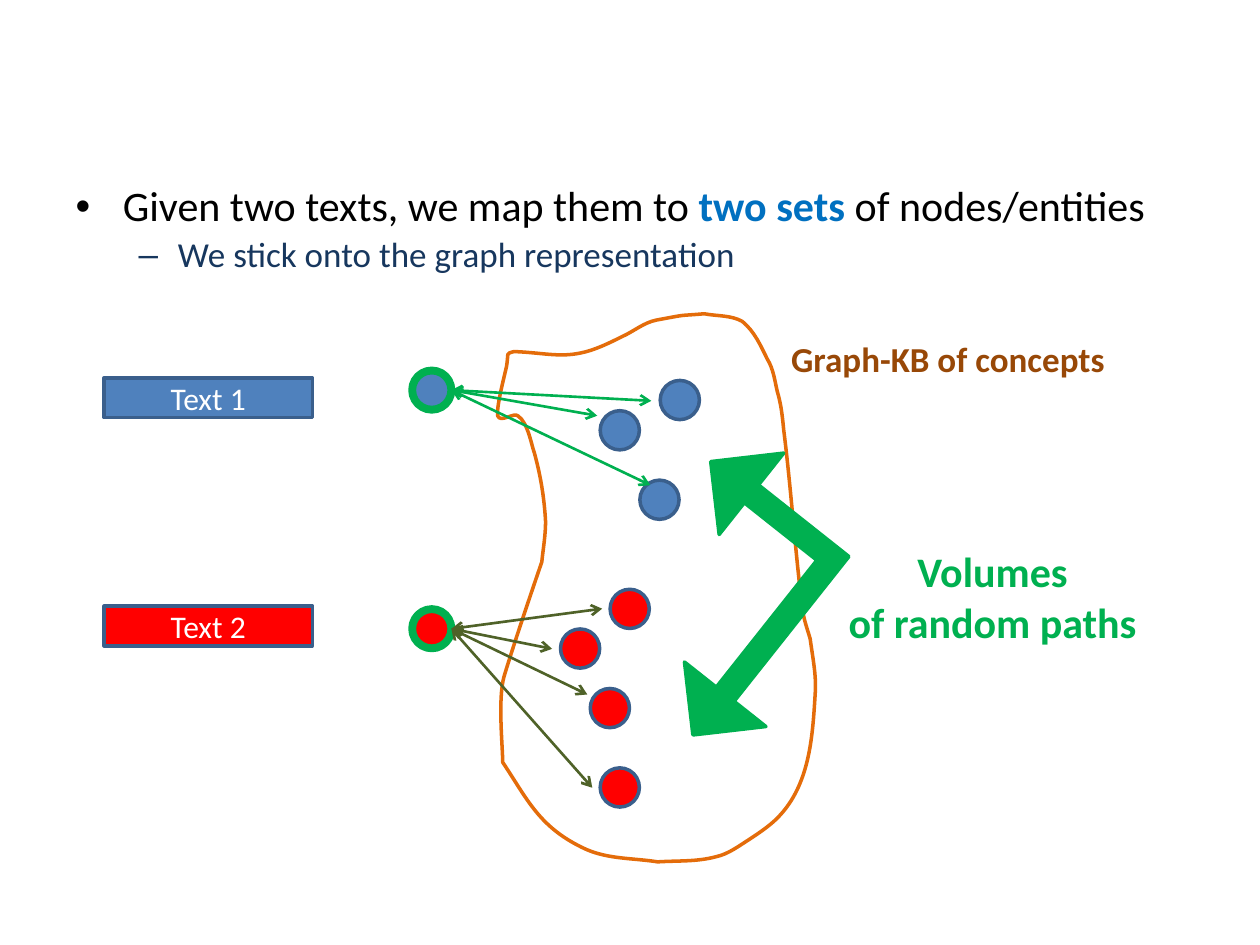
from lxml.etree import SubElement as Sub
from pptx import Presentation as Deck
from pptx.dml.color import RGBColor as Rgb
from pptx.enum.shapes import MSO_CONNECTOR as Link, MSO_SHAPE as Form
from pptx.enum.text import MSO_ANCHOR as Anchor, MSO_AUTO_SIZE as Fit, PP_ALIGN as Align
from pptx.oxml.ns import qn
from pptx.util import Cm, Pt

HUES = {
    "blue": "4F81BD", "red": "FF0000", "edge": "3A5F8C", "green": "00B050",
    "olive": "4F6228", "orange": "E46C0A", "brown": "984807", "navy": "17375E",
    "sky": "0070C0", "black": "000000", "white": "FFFFFF",
}
BODY = {"size": Pt(24), "name": "Calibri"}
SUB = {"size": Pt(20), "name": "Calibri"}
LABEL = {"size": Pt(18), "name": "Calibri"}
STRONG = {**BODY, "bold": True}
NOTE = {**SUB, "bold": True}
DOT = 0.79
CLOUD = [
    (394, 323, 399, 304, 402, 291), (404, 279, 401, 281, 408, 279),
    (434, 280, 447, 285, 469, 278), (478, 275, 486, 271, 494, 267),
    (503, 263, 511, 256, 521, 254), (548, 249, 536, 251, 559, 249),
    (569, 251, 580, 250, 589, 255), (599, 263, 604, 275, 609, 285),
    (614, 293, 615, 303, 617, 311), (620, 321, 621, 331, 622, 341),
    (628, 389, 631, 437, 637, 484), (638, 492, 641, 500, 643, 507),
    (645, 522, 648, 536, 647, 550), (645, 583, 643, 620, 620, 646),
    (613, 654, 604, 660, 595, 666), (587, 671, 578, 678, 568, 680),
    (553, 684, 538, 683, 522, 684), (503, 681, 483, 682, 465, 674),
    (428, 657, 419, 635, 399, 605), (399, 593, 395, 555, 400, 537),
    (409, 507, 430, 446, 430, 446), (431, 436, 433, 425, 433, 414),
    (432, 395, 429, 377, 424, 359), (422, 354, 419, 335, 411, 330),
    (408, 327, 397, 336, 395, 330),
]
SETS = [
    {"text": "Text 1", "fill": "blue", "ray": "green", "box": 7.62, "hub": 7.47,
     "dots": [(12.1, 8.28), (13.31, 7.67), (12.9, 9.68)],
     "ends": [(12.04, 8.38), (13.11, 9.78), (13.13, 8.08)]},
    {"text": "Text 2", "fill": "red", "ray": "olive", "box": 12.22, "hub": 12.28,
     "dots": [(11.3, 12.68), (12.3, 11.88), (11.9, 13.88), (12.1, 15.48)],
     "ends": [(12.14, 12.27), (11.13, 13.08), (11.84, 14), (11.94, 15.88)]},
]


def tint(hue):
    return Rgb.from_string(HUES[hue])


def write(para, text, hue, style):
    run = para.add_run()
    run.text = text
    for key, value in style.items():
        setattr(run.font, key, value)
    run.font.color.rgb = tint(hue)


def paint(shape, fill, edge, width=2):
    shape.shadow.inherit = False
    if fill:
        shape.fill.solid()
        shape.fill.fore_color.rgb = tint(fill)
    else:
        shape.fill.background()
    shape.line.color.rgb = tint(edge)
    shape.line.width = Pt(width)


def add_form(slide, form, spot, fill, edge="edge", width=2):
    shape = slide.shapes.add_shape(form, *map(Cm, spot))
    paint(shape, fill, edge, width)
    return shape


def add_box(slide, top, text, fill):
    box = add_form(slide, Form.RECTANGLE, (2.1, top, 4.2, 0.8), fill)
    box.text_frame.vertical_anchor = Anchor.MIDDLE
    para = box.text_frame.paragraphs[0]
    para.alignment = Align.CENTER
    write(para, text, "white", LABEL)


def add_ray(slide, start, end, hue):
    ray = slide.shapes.add_connector(Link.STRAIGHT, *map(Cm, start + end))
    ray.line.color.rgb = tint(hue)
    ray.line.width = Pt(1.5)
    for tag in ("a:headEnd", "a:tailEnd"):
        Sub(ray.line._get_or_add_ln(), qn(tag), type="arrow")
    Sub(ray._element.spPr, qn("a:effectLst"))


def add_cloud(slide):
    knots = [curve[4:] for curve in CLOUD]
    left, top = map(min, zip(*knots))
    pen = slide.shapes.build_freeform(*knots[-1], scale=Cm(0.0254))
    pen.add_line_segments(knots, close=True)
    cloud = pen.convert_to_shape()
    lines = list(cloud._element.iter(qn("a:lnTo")))
    for line, curve in zip(lines, CLOUD):
        line.tag = qn("a:cubicBezTo")
        for old in list(line):
            line.remove(old)
        for x, y in zip(curve[::2], curve[1::2]):
            Sub(line, qn("a:pt"), x=str(x - left), y=str(y - top))
    paint(cloud, None, "orange")


def add_note(slide, spot, lines, hue, style, align):
    frame = slide.shapes.add_textbox(*map(Cm, spot)).text_frame
    frame.word_wrap = False
    frame.auto_size = Fit.SHAPE_TO_FIT_TEXT
    for index, line in enumerate(lines):
        para = frame.add_paragraph() if index else frame.paragraphs[0]
        para.alignment = align
        write(para, line, hue, style)


def fill_body(slide):
    title = slide.shapes.title._element
    title.getparent().remove(title)
    body = slide.placeholders[1]
    spot = {"left": 1.27, "top": 3.61, "width": 22.86, "height": 2.92}
    for key, value in spot.items():
        setattr(body, key, Cm(value))
    main_para = body.text_frame.paragraphs[0]
    sub_para = body.text_frame.add_paragraph()
    sub_para.level = 1
    for para in (main_para, sub_para):
        para.line_spacing = 0.9
    write(main_para, "Given two texts, we map them to ", "black", BODY)
    write(main_para, "two sets", "sky", STRONG)
    write(main_para, " of nodes/entities", "black", BODY)
    write(sub_para, "We stick onto the graph representation", "navy", SUB)


def add_dots(slide, data):
    for dot in data["dots"]:
        add_form(slide, Form.OVAL, dot + (DOT, DOT), data["fill"])


def add_hub(slide, data):
    hub = (8.31, data["hub"])
    add_form(slide, Form.OVAL, hub + (DOT, DOT), data["fill"], "green", 4.5)
    start = (hub[0] + DOT, hub[1] + DOT / 2)
    for end in data["ends"]:
        add_ray(slide, start, end, data["ray"])


def add_arrow(slide):
    arrow = add_form(slide, Form.LEFT_UP_ARROW, (12.09, 9.88, 5.59, 4.19), "green", "green")
    arrow.rotation = 308.4
    for index, value in enumerate((0.11, 0.25, 0.25)):
        arrow.adjustments[index] = value


def main():
    deck = Deck()
    deck.slide_width, deck.slide_height = Cm(25.4), Cm(19.05)
    slide = deck.slides.add_slide(deck.slide_layouts[1])
    fill_body(slide)
    for data in SETS:
        add_box(slide, data["box"], data["text"], data["fill"])
    for data in SETS:
        add_dots(slide, data)
    add_cloud(slide)
    for data in SETS:
        add_hub(slide, data)
    add_arrow(slide)
    add_note(slide, (16.82, 10.88, 6.38, 2.31), ["Volumes", "of random paths"],
             "green", STRONG, Align.CENTER)
    add_note(slide, (15.7, 6.68, 6.88, 1.12), ["Graph-KB of concepts"],
             "brown", NOTE, Align.LEFT)
    deck.save("out.pptx")


if __name__ == "__main__":
    main()
